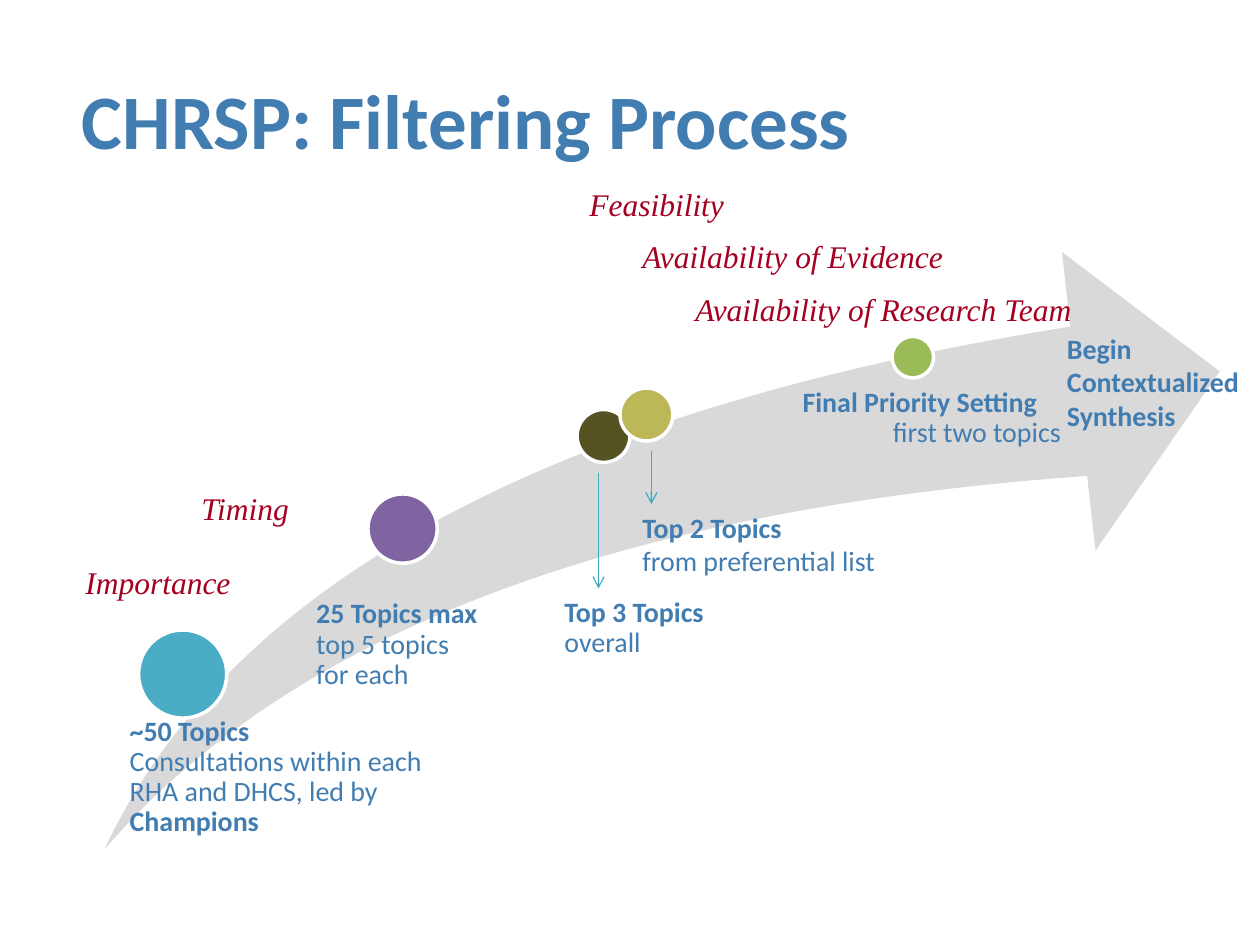
from dataclasses import dataclass

from lxml import etree
from pptx import Presentation
from pptx.dml.color import RGBColor
from pptx.enum.shapes import MSO_CONNECTOR, MSO_SHAPE
from pptx.enum.text import MSO_ANCHOR, MSO_AUTO_SIZE, PP_ALIGN
from pptx.oxml.ns import qn
from pptx.util import Inches, Pt

LEFT, RIGHT = PP_ALIGN.LEFT, PP_ALIGN.RIGHT
OVAL, SWOOSH = MSO_SHAPE.OVAL, MSO_SHAPE.SWOOSH_ARROW
STRAIGHT = MSO_CONNECTOR.STRAIGHT
TOP, MIDDLE = MSO_ANCHOR.TOP, MSO_ANCHOR.MIDDLE
NO_FIT = MSO_AUTO_SIZE.NONE


@dataclass(frozen=True)
class Theme:
    blue: str = "427DB1"
    red: str = "A50021"
    gray: str = "D9D9D9"
    white: str = "FFFFFF"
    arrow: str = "46AAC5"
    sans: str = "Calibri"
    serif: str = "Times New Roman"
    title: int = 44
    criterion: int = 18
    body: int = 16


THEME = Theme()


def rgb(value):
    return RGBColor.from_string(value)


def add_run(p, text, size, color, font, bold=False, italic=False):
    r = p.add_run()
    r.text = text
    r.font.size = Pt(size)
    r.font.name = font
    r.font.bold = bold
    r.font.italic = italic
    r.font.color.rgb = rgb(color)


def add_title(s, text):
    sp = s.shapes.title
    sp.left, sp.top = Inches(0.55), Inches(0.5)
    sp.width, sp.height = Inches(9.08), Inches(0.88)
    tf = sp.text_frame
    tf.auto_size = NO_FIT
    tf.vertical_anchor = MIDDLE
    p = tf.paragraphs[0]
    p.alignment = LEFT
    add_run(p, text, THEME.title, THEME.blue, THEME.sans, bold=True)


def add_textbox(s, x, y, w, h, wrap=True):
    tf = s.shapes.add_textbox(Inches(x), Inches(y), Inches(w), Inches(h)).text_frame
    tf.word_wrap = wrap
    tf.auto_size = NO_FIT
    tf.vertical_anchor = TOP
    return tf


def add_criterion(s, text, x, y, w):
    tf = add_textbox(s, x, y, w, 0.4, wrap=False)
    add_run(tf.paragraphs[0], text, THEME.criterion, THEME.red, THEME.serif, italic=True)


def add_stage(s, x, y, w, h, lines, inset=None, last_align=LEFT):
    tf = add_textbox(s, x, y, w, h)
    if inset is not None:
        tf.margin_left = Inches(inset)
        tf.margin_top = tf.margin_right = tf.margin_bottom = 0
    for i, (text, bold) in enumerate(lines):
        p = tf.paragraphs[0] if i == 0 else tf.add_paragraph()
        p.alignment = last_align if i == len(lines) - 1 else LEFT
        if inset is not None:
            p.line_spacing = 0.9
        add_run(p, text, THEME.body, THEME.blue, THEME.sans, bold=bold)


def add_swoosh(s):
    sp = s.shapes.add_shape(SWOOSH, Inches(0.83), Inches(2), Inches(8.85), Inches(4.74))
    sp.adjustments[0] = sp.adjustments[1] = 0.25
    sp.shadow.inherit = False
    sp.fill.solid()
    sp.fill.fore_color.rgb = rgb(THEME.gray)
    sp.line.fill.background()


def add_dot(s, x, y, size, color):
    sp = s.shapes.add_shape(OVAL, Inches(x), Inches(y), Inches(size), Inches(size))
    sp.shadow.inherit = False
    sp.fill.solid()
    sp.fill.fore_color.rgb = rgb(color)
    sp.line.color.rgb = rgb(THEME.white)
    sp.line.width = Pt(2)


def add_down_arrow(s, x, top, bottom):
    c = s.shapes.add_connector(STRAIGHT, Inches(x), Inches(top), Inches(x), Inches(bottom))
    c.line.color.rgb = rgb(THEME.arrow)
    c.line.width = Pt(0.75)
    etree.SubElement(c.line._get_or_add_ln(), qn("a:tailEnd"), type="arrow")
    etree.SubElement(c._element.spPr, qn("a:effectLst"))


def main():
    prs = Presentation()
    prs.slide_width, prs.slide_height = Inches(10), Inches(7.5)
    s = prs.slides.add_slide(prs.slide_layouts[5])

    add_title(s, "CHRSP: Filtering Process")
    add_swoosh(s)

    for dot in [
        (1.1, 5, 0.7, "4BACC6"),
        (2.92, 3.92, 0.55, "8064A2"),
        (4.58, 3.25, 0.42, "555322"),
        (4.92, 3.08, 0.42, "BCB857"),
        (7.08, 2.67, 0.33, "9BBB59"),
    ]:
        add_dot(s, *dot)

    add_stage(s, 0.92, 5.69, 2.46, 1.39, [
        ("~50 Topics", True),
        ("Consultations within each RHA and DHCS, led by", False),
        ("Champions", True),
    ], inset=0.11)
    add_stage(s, 2.34, 4.76, 1.47, 1.09, [
        ("25 Topics max", True), ("top 5 topics for each", False),
    ], inset=0.17)
    add_stage(s, 4.25, 4.75, 1.71, 0.57, [
        ("Top 3 Topics", True), ("overall", False),
    ], inset=0.23)
    add_stage(s, 5, 4, 2.07, 0.64, [
        ("Top 2 Topics", True), ("from preferential list", False),
    ])
    add_stage(s, 6, 3.08, 2.42, 0.58, [
        ("Final Priority Setting", True), ("first two topics", False),
    ], inset=0.37, last_align=RIGHT)
    add_stage(s, 8.37, 2.58, 1.63, 0.91, [
        ("Begin", True), ("Contextualized", True), ("Synthesis", True),
    ])

    for criterion in [
        ("Importance", 0.58, 4.42, 1.37),
        ("Timing", 1.5, 3.83, 0.9),
        ("Feasibility", 4.58, 1.42, 1.33),
        ("Availability of Evidence", 5, 1.83, 2.75),
        ("Availability of Research Team", 5.42, 2.25, 3.42),
    ]:
        add_criterion(s, *criterion)

    add_down_arrow(s, 4.75, 3.75, 4.67)
    add_down_arrow(s, 5.17, 3.58, 4)
    prs.save("out.pptx")


if __name__ == "__main__":
    main()
